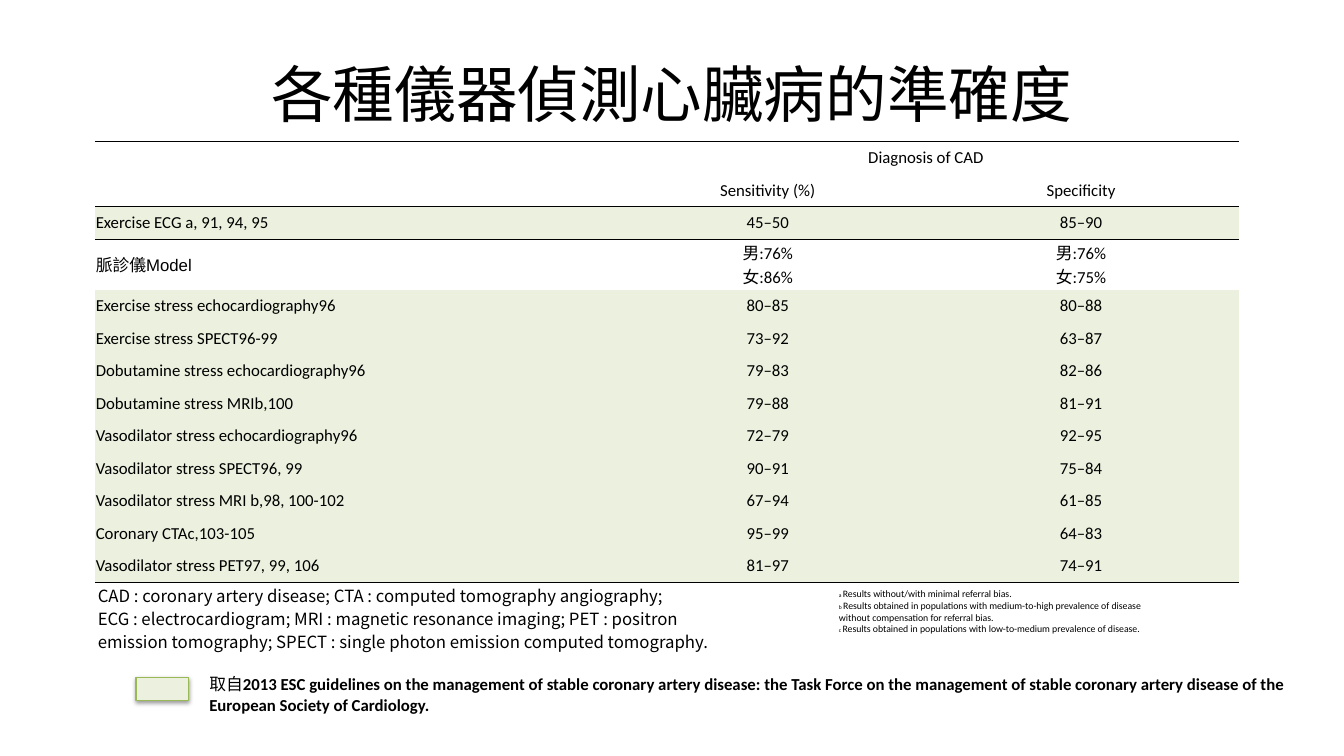
"""Build a slide tabulating the accuracy of tests that detect heart disease."""
import pptx
import pptx.util
import pptx.dml.color
import pptx.enum.shapes
import pptx.enum.text
import pptx.oxml
import pptx.oxml.ns
from lxml import etree

TITLE = "各種儀器偵測心臟病的準確度"
TESTS = [
    ("", "Diagnosis of CAD", ""),
    ("", "Sensitivity (%)", "Specificity"),
    ("Exercise ECG a, 91, 94, 95", "45–50", "85–90"),
    ("脈診儀Model", "男:76%\n女:86%", "男:76%\n女:75%"),
    ("Exercise stress echocardiography96", "80–85", "80–88"),
    ("Exercise stress SPECT96-99", "73–92", "63–87"),
    ("Dobutamine stress echocardiography96", "79–83", "82–86"),
    ("Dobutamine stress MRIb,100", "79–88", "81–91"),
    ("Vasodilator stress echocardiography96", "72–79", "92–95"),
    ("Vasodilator stress SPECT96, 99", "90–91", "75–84"),
    ("Vasodilator stress MRI b,98, 100-102", "67–94", "61–85"),
    ("Coronary CTAc,103-105", "95–99", "64–83"),
    ("Vasodilator stress PET97, 99, 106", "81–97", "74–91"),
]
ABBREVIATIONS = [
    ("CAD : coronary artery disease; CTA : computed tomography angiography;",),
    ("ECG : electrocardiogram; MRI : magnetic resonance imaging; PET : positron",),
    ("emission tomography; SPECT : single photon emission computed tomography.",),
]
NOTES = [
    ("a ", "Results without/with minimal referral bias."),
    ("b ", "Results obtained in populations with medium-to-high prevalence of disease"),
    ("", "without compensation for referral bias."),
    ("c ", "Results obtained in populations with low-to-medium prevalence of disease."),
]
SOURCE = ("取自", "2013 ESC guidelines on the management of stable coronary artery disease: "
          "the Task Force on the management of stable coronary artery disease of the "
          "European Society of Cardiology.")

COLORS = {"ink": "000000", "green": "EBF1DE", "edge": "98B955"}
LATIN, CJK = "Calibri", "Noto Sans CJK TC"
DEVICE_ROW, LAST_ROW = 3, len(TESTS) - 1
RULES = {0: "T", 1: "B", 2: "TB", LAST_ROW: "B"}
NO_STYLE = "{2D5ABB26-0587-4C30-8999-92F81FD0307C}"

LEFT, TOP, BOTTOM = 7.05, 18.75, 77.07
TEST_COLS, DEVICE_HEIGHT = (38.53, 23.09, 23.54), 6.67
TITLE_BOX = (5.02, 4, 89.96, 16.67)
NOTES_BOX = (61.69, BOTTOM, 34.33, 7.6)
SOURCE_BOX = (14.84, 88.53, 82.76, 9.47)
SWATCH_BOX = (10.12, 89.6, 3.9, 3.07)
ABBR_COL, ABBR_ROW = 52.32, 3.07

ALIGN, ANCHOR = pptx.enum.text.PP_ALIGN, pptx.enum.text.MSO_ANCHOR
qn = pptx.oxml.ns.qn

prs = pptx.Presentation()
prs.slide_width = pptx.util.Inches(13.34)
prs.slide_height = pptx.util.Inches(7.5)
s = prs.slides.add_slide(prs.slide_layouts[6])


def rgb(name):
    return pptx.dml.color.RGBColor.from_string(COLORS[name])


def across(share):
    return round(prs.slide_width * share / 100)


def down(share):
    return round(prs.slide_height * share / 100)


def place(box):
    left, top, width, height = box
    return across(left), down(top), across(width), down(height)


def style(p, size, font=LATIN, align=ALIGN.LEFT):
    p.alignment = align
    p.font.size = pptx.util.Pt(size)
    p.font.color.rgb = rgb("ink")
    p.font.name = font
    etree.SubElement(p._p.pPr.find(qn("a:defRPr")), qn("a:ea"), typeface=CJK)


def add_text(box, size, anchor, align=ALIGN.LEFT):
    tf = s.shapes.add_textbox(*place(box)).text_frame
    tf.word_wrap = True
    tf.vertical_anchor = anchor
    style(tf.paragraphs[0], size, align=align)
    return tf


def add_table(rows, cols, heights, top, side, font_of, align_of):
    tbl = s.shapes.add_table(len(rows), len(cols), across(LEFT), down(top),
                             across(sum(cols)), down(sum(heights))).table
    tbl.first_row = tbl.horz_banding = False
    tbl._tbl.tblPr.find(qn("a:tableStyleId")).text = NO_STYLE
    for col, width in zip(tbl.columns, cols):
        col.width = across(width)
    for r, (row, height) in enumerate(zip(rows, heights)):
        tbl.rows[r].height = down(height)
        for c, text in enumerate(row):
            cell = tbl.cell(r, c)
            cell.text = text
            cell.vertical_anchor = ANCHOR.MIDDLE
            cell.margin_left = cell.margin_right = pptx.util.Inches(side)
            cell.margin_top = cell.margin_bottom = 0
            cell.fill.background()
            for p in cell.text_frame.paragraphs:
                style(p, 12, font_of(r, c), align_of(c))
    return tbl


def add_rules(cell, sides):
    tcPr = cell._tc.get_or_add_tcPr()
    for i, side in enumerate(sides):
        tcPr.insert(i, pptx.oxml.parse_xml(
            f'<a:ln{side} {pptx.oxml.ns.nsdecls("a")} w="12700"><a:solidFill>'
            f'<a:srgbClr val="{COLORS["ink"]}"/></a:solidFill></a:ln{side}>'))


add_text(TITLE_BOX, 44, ANCHOR.MIDDLE, ALIGN.CENTER).paragraphs[0].add_run().text = TITLE

row_height = (BOTTOM - TOP - DEVICE_HEIGHT) / LAST_ROW
heights = [DEVICE_HEIGHT if r == DEVICE_ROW else row_height for r in range(len(TESTS))]
tests = add_table(TESTS, TEST_COLS, heights, TOP, 0.01,
                  lambda r, c: "Arial" if (r, c) == (DEVICE_ROW, 0) else LATIN,
                  lambda c: ALIGN.CENTER if c else ALIGN.LEFT)
tests.cell(0, 1).merge(tests.cell(0, 2))
for r in range(len(TESTS)):
    for c in range(len(TEST_COLS)):
        cell = tests.cell(r, c)
        if r >= 2 and r != DEVICE_ROW:
            cell.fill.solid()
            cell.fill.fore_color.rgb = rgb("green")
        add_rules(cell, RULES.get(r, ""))

add_table(ABBREVIATIONS, (ABBR_COL,), [ABBR_ROW] * len(ABBREVIATIONS), BOTTOM, 0.03,
          lambda r, c: CJK, lambda c: ALIGN.LEFT)

tf = add_text(NOTES_BOX, 7, ANCHOR.MIDDLE)
for i, (mark, note) in enumerate(NOTES):
    p = tf.paragraphs[0]
    if i:
        p = tf.add_paragraph()
        style(p, 7)
    if mark:
        run = p.add_run()
        run.text = mark
        run.font.size = pptx.util.Pt(4)
    p.add_run().text = note

p = add_text(SOURCE_BOX, 12, ANCHOR.TOP).paragraphs[0]
for text, bold in zip(SOURCE, (False, True)):
    run = p.add_run()
    run.text = text
    run.font.bold = bold

sp = s.shapes.add_shape(pptx.enum.shapes.MSO_SHAPE.RECTANGLE, *place(SWATCH_BOX))
sp.fill.solid()
sp.fill.fore_color.rgb = rgb("green")
sp.line.color.rgb = rgb("edge")
sp.line.width = pptx.util.Pt(0.75)
sp.shadow.inherit = False
sp._element.spPr.find(qn("a:effectLst")).append(pptx.oxml.parse_xml(
    f'<a:outerShdw {pptx.oxml.ns.nsdecls("a")} blurRad="39370" dist="20320" dir="5400000" '
    f'rotWithShape="0"><a:srgbClr val="{COLORS["ink"]}"><a:alpha val="38000"/>'
    '</a:srgbClr></a:outerShdw>'))

prs.save("out.pptx")
